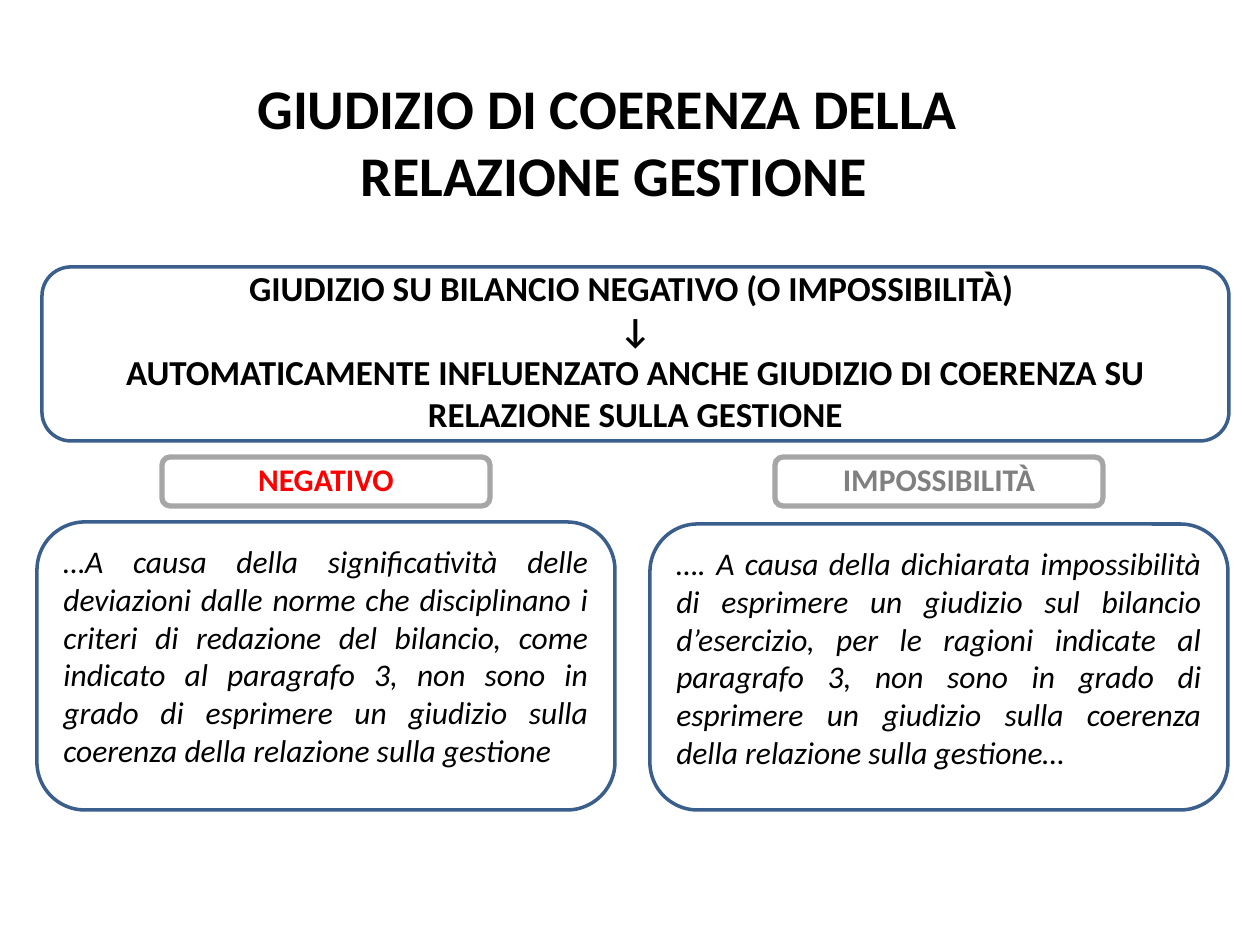
from dataclasses import dataclass
from typing import Optional

from pptx import Presentation
from pptx.dml.color import RGBColor
from pptx.enum.shapes import MSO_SHAPE
from pptx.enum.text import MSO_ANCHOR, MSO_AUTO_SIZE, PP_ALIGN
from pptx.util import Emu, Pt

PX = 914400 / 126
FONT = "Calibri"
BLACK = RGBColor(0x00, 0x00, 0x00)
WHITE = RGBColor(0xFF, 0xFF, 0xFF)
BLUE = RGBColor(0x3A, 0x5F, 0x8C)
SILVER = RGBColor(0xA6, 0xA6, 0xA6)
GRAY = RGBColor(0x80, 0x80, 0x80)
RED = RGBColor(0xFF, 0x00, 0x00)


@dataclass(frozen=True)
class Style:
    size: int
    color: RGBColor = BLACK
    bold: bool = True
    italic: bool = False
    align: PP_ALIGN = PP_ALIGN.CENTER
    anchor: MSO_ANCHOR = MSO_ANCHOR.MIDDLE
    spacing: Optional[float] = None


@dataclass(frozen=True)
class Box:
    x: int
    y: int
    w: int
    h: int
    lines: tuple[str, ...]
    style: Style
    line: RGBColor = BLUE
    line_width: int = 2
    fill: Optional[RGBColor] = None
    inset_top: int = 6


TITLE = Style(32)
HEADING = Style(20)
OPINION = Style(18, bold=False, italic=True,
                align=PP_ALIGN.JUSTIFY, anchor=MSO_ANCHOR.TOP)

COLUMNS = (
    (37, 522, "NEGATIVO", RED,
     "…A causa della significatività delle deviazioni dalle norme che "
     "disciplinano i criteri di redazione del bilancio, come indicato al "
     "paragrafo 3, non sono in grado di esprimere un giudizio sulla coerenza "
     "della relazione sulla gestione"),
    (650, 524, "IMPOSSIBILITÀ", GRAY,
     "…. A causa della dichiarata impossibilità di esprimere un giudizio sul "
     "bilancio d’esercizio, per le ragioni indicate al paragrafo 3, non sono "
     "in grado di esprimere un giudizio sulla coerenza della relazione sulla "
     "gestione…"),
)
OPINION_BOTTOM = 810


def px(n: int) -> Emu:
    return Emu(round(n * PX))


def write(tf, lines: tuple[str, ...], style: Style) -> None:
    tf.word_wrap = True
    tf.auto_size = MSO_AUTO_SIZE.NONE
    tf.vertical_anchor = style.anchor
    tf.text = "\n".join(lines)
    for p in tf.paragraphs:
        p.alignment = style.align
        if style.spacing:
            p.line_spacing = style.spacing
        p.font.name = FONT
        p.font.size = Pt(style.size)
        p.font.bold = style.bold
        p.font.italic = style.italic
        p.font.color.rgb = style.color


def draw_box(s, box: Box) -> None:
    sp = s.shapes.add_shape(MSO_SHAPE.ROUNDED_RECTANGLE,
                            px(box.x), px(box.y), px(box.w), px(box.h))
    sp.shadow.inherit = False
    if box.fill is None:
        sp.fill.background()
    else:
        sp.fill.solid()
        sp.fill.fore_color.rgb = box.fill
    sp.line.color.rgb = box.line
    sp.line.width = Pt(box.line_width)
    sp.text_frame.margin_top = px(box.inset_top)
    write(sp.text_frame, box.lines, box.style)


def draw_title(s, lines: tuple[str, ...]) -> None:
    title = s.shapes.title
    title.left, title.top = px(-16), px(103)
    title.width, title.height = px(1260), px(76)
    write(title.text_frame, lines, TITLE)


def main() -> None:
    prs = Presentation()
    prs.slide_width, prs.slide_height = px(1260), px(945)
    s = prs.slides.add_slide(prs.slide_layouts[5])

    draw_title(s, ("GIUDIZIO DI COERENZA DELLA ", "RELAZIONE GESTIONE"))
    draw_box(s, Box(42, 267, 1187, 174, (
        "GIUDIZIO SU BILANCIO NEGATIVO (O IMPOSSIBILITÀ) ",
        "↓",
        "AUTOMATICAMENTE INFLUENZATO ANCHE GIUDIZIO DI COERENZA SU "
        "RELAZIONE SULLA GESTIONE",
    ), HEADING, fill=WHITE, inset_top=0))
    for x, y, label, color, opinion in COLUMNS:
        draw_box(s, Box(x, y, 578, OPINION_BOTTOM - y, (opinion,), OPINION))
        draw_box(s, Box(x + 125, 457, 328, 49, (label,),
                        Style(18, color, spacing=0.9), SILVER, 3))

    prs.save("out.pptx")


if __name__ == "__main__":
    main()
